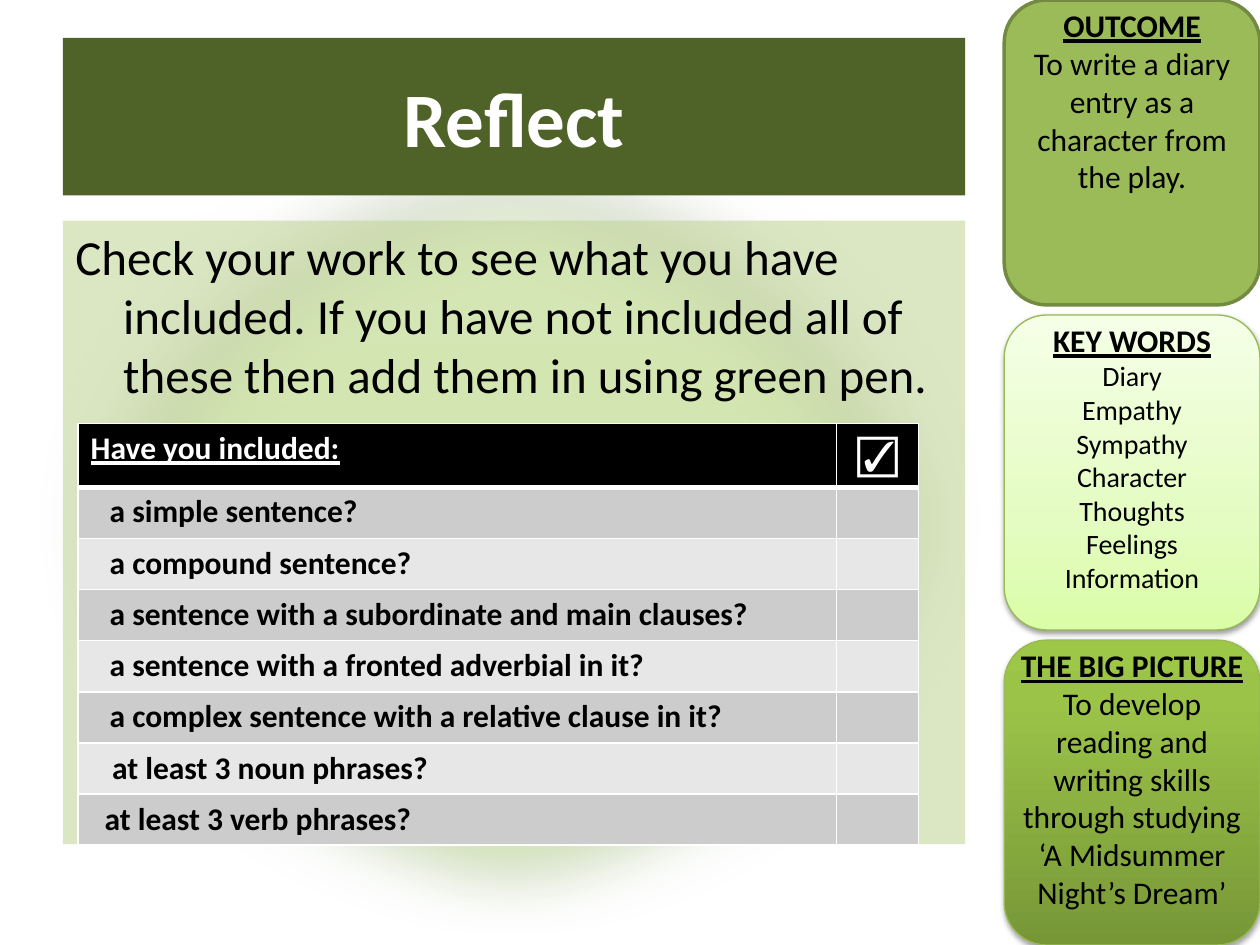
from dataclasses import dataclass
from typing import Optional

from lxml import etree
from pptx import Presentation
from pptx import util as u
from pptx.dml.color import RGBColor
from pptx.enum import shapes, text
from pptx.oxml.ns import qn

Inches, Pt = u.Inches, u.Pt
FONT = "Calibri"
BLACK = RGBColor(0x00, 0x00, 0x00)
WHITE = RGBColor(0xFF, 0xFF, 0xFF)
DARK_GREEN = RGBColor(0x4F, 0x62, 0x28)
PALE_GREEN = RGBColor(0xC3, 0xD6, 0x9B)
LEAF = RGBColor(0x9B, 0xBB, 0x59)
LEAF_EDGE = RGBColor(0x73, 0x8A, 0x42)
LIME_EDGE = RGBColor(0x98, 0xB9, 0x55)
BANDS = (RGBColor(0xCC, 0xCC, 0xCC), RGBColor(0xE7, 0xE7, 0xE7))
MINT_STOPS = ((0, "DAFDA7"), (35, "E4FCC2"), (100, "F5FFE7"))
MOSS_STOPS = ((0, "779737"), (80, "9BC348"), (100, "9DC746"))

PANEL_LEFT, PANEL_WIDTH = 7.97, 2.03
MAIN_LEFT, MAIN_WIDTH = 0.5, 7.16


@dataclass
class Style:
    fill: Optional[RGBColor] = None
    stops: tuple = ()
    edge: Optional[RGBColor] = None
    edge_width: float = 0.75
    shadow_alpha: int = 0
    soft_edge: float = 0


@dataclass
class Panel:
    top: float
    height: float
    text_height: float
    style: Style
    heading: str
    lines: tuple
    size: int = 18


@dataclass
class Check:
    label: str
    indent: float = 0.25
    inset: float = 0
    spacing: float = 1.15


PANELS = (
    Panel(0, 2.42, 1.62, Style(fill=LEAF, edge=LEAF_EDGE, edge_width=2), "OUTCOME",
          ("To write a diary entry as a character from the play.",)),
    Panel(2.5, 2.5, 2.29, Style(stops=MINT_STOPS, edge=LIME_EDGE, shadow_alpha=38),
          "KEY WORDS",
          ("Diary", "Empathy", "Sympathy", "Character", "Thoughts", "Feelings",
           "Information"), 16),
    Panel(5.08, 2.42, 2.22, Style(stops=MOSS_STOPS, edge=LIME_EDGE, shadow_alpha=35),
          "THE BIG PICTURE",
          ("To develop reading and writing skills through studying "
           "‘A Midsummer Night’s Dream’",)),
)
CHECKS = (
    Check("a simple sentence?"),
    Check("a compound sentence?"),
    Check("a sentence with a subordinate and main clauses?"),
    Check("a sentence with a fronted adverbial in it?"),
    Check("a complex sentence with a relative clause in it?"),
    Check("at least 3 noun phrases?", 0.27, 0.05, 1),
    Check("at least 3 verb phrases?", 0.21, 0.05, 1),
)


def sub(parent, tag: str, **attrs):
    return etree.SubElement(parent, qn(tag), {k: str(v) for k, v in attrs.items()})


def add_colour(parent, colour, alpha: int = 100) -> None:
    clr = sub(parent, "a:srgbClr", val=colour)
    if alpha < 100:
        sub(clr, "a:alpha", val=alpha * 1000)


def set_gradient(sp, stops: tuple) -> None:
    """Fill from bottom to top with any number of stops."""
    sp.fill.gradient()
    sp.fill.gradient_angle = 90
    stop_list = sp.element.spPr.find(".//" + qn("a:gsLst"))
    for old in list(stop_list):
        stop_list.remove(old)
    for pos, colour in stops:
        add_colour(sub(stop_list, "a:gs", pos=pos * 1000), colour)


def add_box(s, kind, left: float, top: float, width: float, height: float, style: Style):
    sp = s.shapes.add_shape(kind, Inches(left), Inches(top), Inches(width), Inches(height))
    if style.stops:
        set_gradient(sp, style.stops)
    else:
        sp.fill.solid()
        sp.fill.fore_color.rgb = style.fill
    if style.edge is None:
        sp.line.fill.background()
    else:
        sp.line.color.rgb = style.edge
        sp.line.width = Pt(style.edge_width)
    sp.shadow.inherit = False
    effects = sp.element.spPr.find(qn("a:effectLst"))
    if style.shadow_alpha:
        shadow = sub(effects, "a:outerShdw", blurRad=Pt(3.1), dist=Pt(1.6),
                     dir=5400000, rotWithShape=0)
        add_colour(shadow, BLACK, style.shadow_alpha)
    if style.soft_edge:
        sub(effects, "a:softEdge", rad=Inches(style.soft_edge))
    return sp


def add_run(p, words: str, size: int, colour: RGBColor = BLACK, bold: bool = False,
            underline: bool = False) -> None:
    r = p.add_run()
    r.text = words
    r.font.name, r.font.size = FONT, Pt(size)
    r.font.bold, r.font.underline = bold, underline
    r.font.color.rgb = colour


def add_panel(s, panel: Panel) -> None:
    add_box(s, shapes.MSO_SHAPE.ROUNDED_RECTANGLE, PANEL_LEFT, panel.top, PANEL_WIDTH,
            panel.height, panel.style)
    tf = s.shapes.add_textbox(Inches(PANEL_LEFT), Inches(panel.top), Inches(PANEL_WIDTH),
                              Inches(panel.text_height)).text_frame
    tf.word_wrap = True
    tf.auto_size = text.MSO_AUTO_SIZE.SHAPE_TO_FIT_TEXT
    p = tf.paragraphs[0]
    p.alignment = text.PP_ALIGN.CENTER
    add_run(p, panel.heading, 18, bold=True, underline=True)
    for line in panel.lines:
        p = tf.add_paragraph()
        p.alignment = text.PP_ALIGN.CENTER
        add_run(p, line, panel.size)


def style_cell(cell, fill: RGBColor, bottom: float = 1, top: float = 1) -> None:
    """Fill the cell and give it white borders, widths in points."""
    cell.fill.solid()
    cell.fill.fore_color.rgb = fill
    props = cell._tc.get_or_add_tcPr()
    borders = (("a:lnL", 1), ("a:lnR", 1), ("a:lnT", top), ("a:lnB", bottom))
    for i, (tag, width) in enumerate(borders):
        ln = sub(props, tag, w=Pt(width))
        add_colour(sub(ln, "a:solidFill"), WHITE)
        props.insert(i, ln)


def add_checklist(s) -> None:
    count = len(CHECKS) + 1
    frame = s.shapes.add_table(count, 2, Inches(0.62), Inches(3.36), Inches(6.67),
                               Inches(3.25))
    table = frame.table
    for column, width in zip(table.columns, (6.02, 0.65)):
        column.width = Inches(width)

    heading, tick = table.cell(0, 0), table.cell(0, 1)
    for cell in (heading, tick):
        style_cell(cell, BLACK, bottom=3)
    add_run(heading.text_frame.paragraphs[0], "Have you included:", 18, WHITE, True, True)
    p = tick.text_frame.paragraphs[0]
    p.alignment = text.PP_ALIGN.CENTER
    add_run(p, "☑", 24, WHITE, True)

    for row, check in enumerate(CHECKS, start=1):
        for column in range(2):
            style_cell(table.cell(row, column), BANDS[(row - 1) % 2],
                       top=3 if row == 1 else 1)
        cell = table.cell(row, 0)
        cell.margin_left, cell.margin_right = Inches(check.indent), 0
        cell.margin_top = cell.margin_bottom = Inches(check.inset)
        p = cell.text_frame.paragraphs[0]
        p.line_spacing = check.spacing
        add_run(p, check.label, 18, bold=True)


def add_title(s) -> None:
    sp = add_box(s, shapes.MSO_SHAPE.RECTANGLE, MAIN_LEFT, 0.3, MAIN_WIDTH, 1.25,
                 Style(fill=DARK_GREEN))
    tf = sp.text_frame
    tf.vertical_anchor = text.MSO_ANCHOR.MIDDLE
    p = tf.paragraphs[0]
    p.alignment = text.PP_ALIGN.CENTER
    add_run(p, "Reflect", 44, WHITE, True)


def add_instructions(s) -> None:
    sp = add_box(s, shapes.MSO_SHAPE.RECTANGLE, MAIN_LEFT, 1.75, MAIN_WIDTH, 4.95,
                 Style(fill=PALE_GREEN))
    sub(sp.element.spPr.find(qn("a:solidFill"))[0], "a:alpha", val=60000)
    tf = sp.text_frame
    tf.word_wrap = True
    tf.vertical_anchor = text.MSO_ANCHOR.TOP
    p = tf.paragraphs[0]
    p.alignment = text.PP_ALIGN.LEFT
    props = p._p.get_or_add_pPr()
    props.set("marL", str(Inches(0.38)))
    props.set("indent", str(-Inches(0.38)))
    add_run(p, "Check your work to see what you have included. If you have not included "
               "all of these then add them in using green pen.", 28)


def main() -> None:
    prs = Presentation()
    prs.slide_width, prs.slide_height = Inches(10), Inches(7.5)
    s = prs.slides.add_slide(prs.slide_layouts[6])
    add_box(s, shapes.MSO_SHAPE.OVAL, 0.23, 0.78, 7.66, 6.72,
            Style(stops=MINT_STOPS, shadow_alpha=38, soft_edge=0.69))
    add_title(s)
    add_instructions(s)
    add_checklist(s)
    for panel in PANELS:
        add_panel(s, panel)
    prs.save("out.pptx")


if __name__ == "__main__":
    main()
